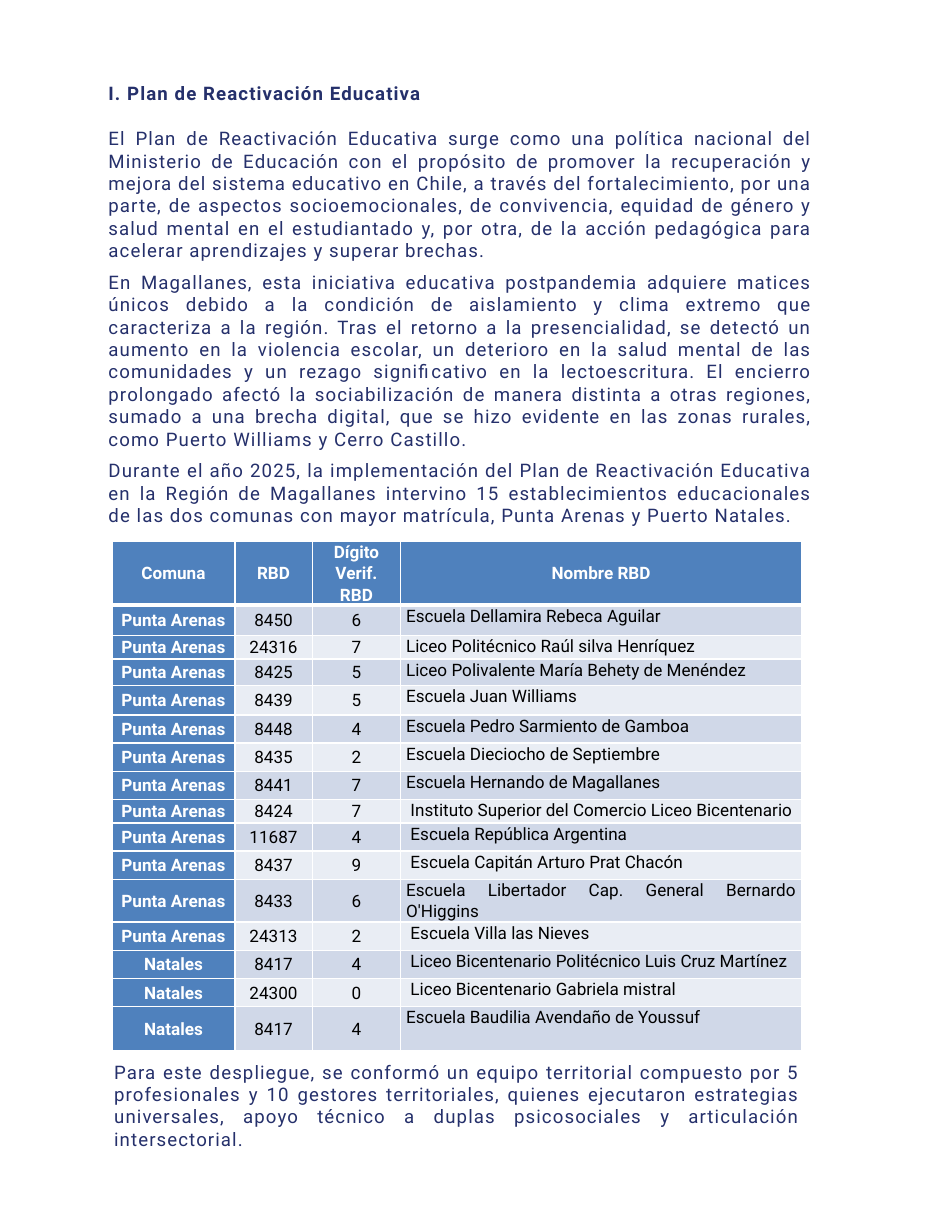
import dataclasses

import pptx
import pptx.dml.color
import pptx.enum.text
import pptx.oxml
import pptx.oxml.ns
import pptx.util
from pptx.util import Cm

ALIGN = pptx.enum.text.PP_ALIGN
ANCHOR = pptx.enum.text.MSO_ANCHOR


@dataclasses.dataclass(frozen=True)
class Theme:
    """Colours, font and type sizes of the page."""
    font: str = "Roboto"
    navy: str = "25306B"
    blue: str = "4F81BD"
    bands: tuple = ("D0D8E8", "E9EDF4")
    white: str = "FFFFFF"
    black: str = "000000"
    body_size: float = 12
    table_size: float = 11
    tracking: float = 0.7


THEME = Theme()

HEADING = "I. Plan de Reactivación Educativa"
INTRODUCTION = [
    "El Plan de Reactivación Educativa surge como una política nacional del Ministerio de Educación "
    "con el propósito de promover la recuperación y mejora del sistema educativo en Chile, a través "
    "del fortalecimiento, por una parte, de aspectos socioemocionales, de convivencia, equidad de "
    "género y salud mental en el estudiantado y, por otra, de la acción pedagógica para acelerar "
    "aprendizajes y superar brechas.",
    "En Magallanes, esta iniciativa educativa postpandemia adquiere matices únicos debido a la "
    "condición de aislamiento y clima extremo que caracteriza a la región. Tras el retorno a la "
    "presencialidad, se detectó un aumento en la violencia escolar, un deterioro en la salud mental "
    "de las comunidades y un rezago significativo en la lectoescritura. El encierro prolongado afectó "
    "la sociabilización de manera distinta a otras regiones, sumado a una brecha digital, que se hizo "
    "evidente en las zonas rurales, como Puerto Williams y Cerro Castillo.",
    "Durante el año 2025, la implementación del Plan de Reactivación Educativa en la Región de "
    "Magallanes intervino 15 establecimientos educacionales de las dos comunas con mayor matrícula, "
    "Punta Arenas y Puerto Natales.",
]
CLOSING = [
    "Para este despliegue, se conformó un equipo territorial compuesto por 5 profesionales y 10 "
    "gestores territoriales, quienes ejecutaron estrategias universales, apoyo técnico a duplas "
    "psicosociales y articulación intersectorial.",
]

COLUMNS = {"Comuna": 2.79, "RBD": 1.75, "Dígito Verif. RBD": 2.01, "Nombre RBD": 9.09}
HEADER_HEIGHT = 0.99
NAME_INDENT = 0.1
SCHOOLS = [
    ("Punta Arenas", "8450", "6", "Escuela Dellamira Rebeca Aguilar", 0.69, 0),
    ("Punta Arenas", "24316", "7", "Liceo Politécnico Raúl silva Henríquez", 0.53, 0),
    ("Punta Arenas", "8425", "5", "Liceo Polivalente María Behety de Menéndez", 0.61, 0),
    ("Punta Arenas", "8439", "5", "Escuela Juan Williams", 0.66, 0),
    ("Punta Arenas", "8448", "4", "Escuela Pedro Sarmiento de Gamboa", 0.64, 0),
    ("Punta Arenas", "8435", "2", "Escuela Dieciocho de Septiembre", 0.64, 0),
    ("Punta Arenas", "8441", "7", "Escuela Hernando de Magallanes", 0.64, 0),
    ("Punta Arenas", "8424", "7", "Instituto Superior del Comercio Liceo Bicentenario", 0.53, NAME_INDENT),
    ("Punta Arenas", "11687", "4", "Escuela República Argentina", 0.64, NAME_INDENT),
    ("Punta Arenas", "8437", "9", "Escuela Capitán Arturo Prat Chacón", 0.64, NAME_INDENT),
    ("Punta Arenas", "8433", "6", "Escuela Libertador Cap. General Bernardo O'Higgins", 0.64, 0),
    ("Punta Arenas", "24313", "2", "Escuela Villa las Nieves", 0.64, NAME_INDENT),
    ("Natales", "8417", "4", "Liceo Bicentenario Politécnico Luis Cruz Martínez", 0.64, NAME_INDENT),
    ("Natales", "24300", "0", "Liceo Bicentenario Gabriela mistral", 0.64, NAME_INDENT),
    ("Natales", "8417", "4", "Escuela Baudilia Avendaño de Youssuf", 0.99, 0),
]


def rgb(code):
    """Turn a hex code into a colour."""
    return pptx.dml.color.RGBColor.from_string(code)


def write_text(para, text, *, size=THEME.body_size, color=THEME.navy, bold=False, align=ALIGN.JUSTIFY,
               tracking=0, line=1.0, after=0, indent=0):
    """Fill a paragraph with one formatted span."""
    properties = para._p.get_or_add_pPr()
    properties.set("marL", str(Cm(indent)))
    properties.set("indent", "0")
    properties.append(properties.makeelement(pptx.oxml.ns.qn("a:buNone"), {}))
    para.alignment, para.line_spacing = align, line
    para.space_before, para.space_after = pptx.util.Pt(0), pptx.util.Pt(after)
    span = para.add_run()
    span.text = text
    span.font.name, span.font.size, span.font.bold = THEME.font, pptx.util.Pt(size), bold
    span.font.color.rgb = rgb(color)
    if tracking:
        span._r.get_or_add_rPr().set("spc", str(round(tracking * 100)))


def fill_prose(box, region, paragraphs, bold=False):
    """Place a text shape in its region and write tracked paragraphs."""
    box.left, box.top, box.width, box.height = (Cm(length) for length in region)
    frame = box.text_frame
    frame.word_wrap, frame.vertical_anchor = True, ANCHOR.TOP
    frame.auto_size = pptx.enum.text.MSO_AUTO_SIZE.NONE
    frame.margin_left = frame.margin_right = frame.margin_top = frame.margin_bottom = 0
    for number, text in enumerate(paragraphs):
        para = frame.add_paragraph() if number else frame.paragraphs[0]
        write_text(para, text, bold=bold, tracking=THEME.tracking,
                   after=6 if number < len(paragraphs) - 1 else 0)


def add_borders(cell, top=1, bottom=1):
    """Draw white borders of the given widths around a cell."""
    properties = cell._tc.get_or_add_tcPr()
    for position, (side, width) in enumerate(zip("LRTB", (1, 1, top, bottom))):
        properties.insert(position, pptx.oxml.parse_xml(
            f'<a:ln{side} {pptx.oxml.ns.nsdecls("a")} w="{pptx.util.Pt(width)}"><a:solidFill>'
            f'<a:srgbClr val="{THEME.white}"/></a:solidFill></a:ln{side}>'))


def fill_cell(cell, text, fill, *, anchor=ANCHOR.MIDDLE, top=1, bottom=1, **style):
    """Format one table cell and write its text."""
    cell.margin_left = cell.margin_right = Cm(0.12)
    cell.margin_top = cell.margin_bottom = 0
    cell.vertical_anchor = anchor
    cell.fill.solid()
    cell.fill.fore_color.rgb = rgb(fill)
    add_borders(cell, top, bottom)
    write_text(cell.text_frame.paragraphs[0], text, size=THEME.table_size, line=1.07, after=8, **style)


def add_school_table(page, left, top):
    """Build the table of schools from its top left corner."""
    heights = [HEADER_HEIGHT] + [school[4] for school in SCHOOLS]
    grid = page.shapes.add_table(len(heights), len(COLUMNS), Cm(left), Cm(top),
                                 Cm(sum(COLUMNS.values())), Cm(sum(heights))).table
    for column, width in zip(grid.columns, COLUMNS.values()):
        column.width = Cm(width)
    for row, height in zip(grid.rows, heights):
        row.height = Cm(height)
    label = dict(color=THEME.white, bold=True, align=ALIGN.CENTER)
    for index, title in enumerate(COLUMNS):
        fill_cell(grid.cell(0, index), title, THEME.blue, bottom=3, **label)
    for number, (town, code, digit, name, _, indent) in enumerate(SCHOOLS, 1):
        band = THEME.bands[(number - 1) % 2]
        edge = 3 if number == 1 else 1
        fill_cell(grid.cell(number, 0), town, THEME.blue, top=edge, **label)
        for index, value in enumerate((code, digit), 1):
            fill_cell(grid.cell(number, index), value, band, top=edge,
                      color=THEME.black, align=ALIGN.CENTER)
        fill_cell(grid.cell(number, 3), name, band, top=edge, anchor=ANCHOR.TOP,
                  color=THEME.black, indent=indent)


def main():
    """Build the page and save the deck."""
    deck = pptx.Presentation()
    deck.slide_width, deck.slide_height = Cm(21.59), Cm(27.94)
    page = deck.slides.add_slide(deck.slide_layouts[1])
    fill_prose(page.shapes.title, (2.46, 1.85, 15.98, 0.5), [HEADING], bold=True)
    fill_prose(page.placeholders[1], (2.46, 2.88, 15.98, 9.05), INTRODUCTION)
    add_school_table(page, 2.54, 12.27)
    fill_prose(page.shapes.add_textbox(0, 0, 0, 0), (2.59, 24.05, 15.57, 2), CLOSING)
    deck.save("out.pptx")


if __name__ == "__main__":
    main()
